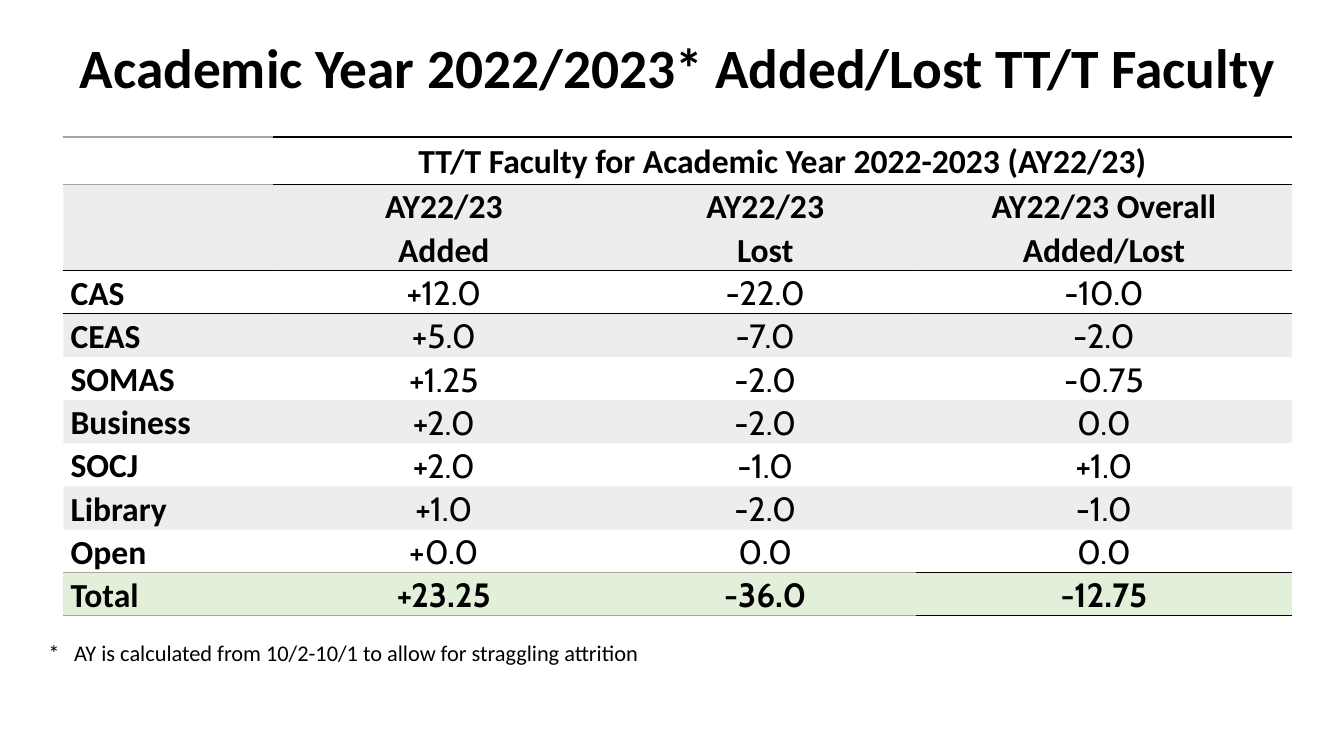
import pptx
import pptx.util
import pptx.dml.color
import pptx.enum.text
import pptx.oxml
import pptx.oxml.ns
import lxml.etree

Cm = pptx.util.Cm
Pt = pptx.util.Pt
Align = pptx.enum.text.PP_ALIGN
Anchor = pptx.enum.text.MSO_ANCHOR

title = "Academic Year 2022/2023* Added/Lost TT/T Faculty"
footnote = "*\tAY is calculated from 10/2-10/1 to allow for straggling attrition"
span_heading = "TT/T Faculty for Academic Year 2022-2023 (AY22/23)"
column_headings = ["", "AY22/23\nAdded", "AY22/23\nLost", "AY22/23 Overall\nAdded/Lost"]
units = [
    ("CAS", "+12.0", "-22.0", "-10.0"),
    ("CEAS", "+5.0", "-7.0", "-2.0"),
    ("SOMAS", "+1.25", "-2.0", "-0.75"),
    ("Business", "+2.0", "-2.0", "0.0"),
    ("SOCJ", "+2.0", "-1.0", "+1.0"),
    ("Library", "+1.0", "-2.0", "-1.0"),
    ("Open", "+0.0", "0.0", "0.0"),
]
total = ("Total", "+23.25", "-36.0", "-12.75")

theme = {
    "ink": "000000", "gray": "A5A5A5", "green": "E2F0D9", "band_alpha": 20000,
    "text": "Calibri", "figures": "Cabin",
    "title_size": 39.6, "table_size": 24, "footnote_size": 16, "rule": 1,
}
column_widths = [5.28, 8.61, 7.59, 9.48]
row_heights = [1.19, 1.63] + [0.89] * (len(units) + 1)


def write(paragraph, text, size, bold=False, font="text", align=Align.LEFT, spacing=None):
    paragraph.alignment = align
    if spacing:
        paragraph.line_spacing = spacing
    run = paragraph.add_run()
    run.text = text
    formats = {"size": Pt(theme[size]), "bold": bold, "name": theme[font]}
    for name, value in formats.items():
        setattr(run.font, name, value)
    run.font.color.rgb = pptx.dml.color.RGBColor.from_string(theme["ink"])


def add_text(slide, left, top, width, height, anchor):
    frame = slide.shapes.add_textbox(Cm(left), Cm(top), Cm(width), Cm(height)).text_frame
    frame.word_wrap = True
    frame.vertical_anchor = anchor
    return frame.paragraphs[0]


def paint(cell, color, alpha=None):
    cell.fill.solid()
    cell.fill.fore_color.rgb = pptx.dml.color.RGBColor.from_string(theme[color])
    if alpha:
        tint = cell._tc.tcPr.find(".//" + pptx.oxml.ns.qn("a:srgbClr"))
        lxml.etree.SubElement(tint, pptx.oxml.ns.qn("a:alpha")).set("val", str(alpha))


def rule(cell, edges):
    properties = cell._tc.get_or_add_tcPr()
    for position, (edge, color) in enumerate(edges.items()):
        line = pptx.oxml.parse_xml(
            f'<a:{edge} {pptx.oxml.ns.nsdecls("a")} w="{Pt(theme["rule"])}">'
            f'<a:solidFill><a:srgbClr val="{theme[color]}"/></a:solidFill></a:{edge}>')
        properties.insert(position, line)


def cell_edges(row, column):
    last_unit, total_row = len(units) + 1, len(units) + 2
    last_column = column == len(column_widths) - 1
    if row == 0:
        color = "ink" if column else "gray"
        return {"lnT": color, "lnB": color}
    if row == 1:
        return {"lnT": "ink", "lnB": "ink"} if column else {"lnB": "ink"}
    if row == 2:
        return {"lnT": "ink"} if last_column else {"lnT": "ink", "lnB": "ink"}
    if row == last_unit and last_column:
        return {"lnB": "ink"}
    if row == total_row:
        color = "ink" if last_column else "gray"
        return {"lnT": color, "lnB": color}
    return {}


def fill_cell(cell, row, column, text):
    total_row = len(row_heights) - 1
    if row == total_row:
        paint(cell, "green")
    elif row % 2:
        paint(cell, "gray", theme["band_alpha"])
    else:
        cell.fill.background()
    rule(cell, cell_edges(row, column))
    if not text:
        return
    margins = {"margin_left": Cm(0.18), "margin_right": Cm(0.18),
               "margin_top": 0, "margin_bottom": 0}
    for name, value in margins.items():
        setattr(cell, name, value)
    if row == 0:
        cell.vertical_anchor = Anchor.MIDDLE
    is_figure = row > 1 and column > 0
    for number, line in enumerate(text.split("\n")):
        frame = cell.text_frame
        paragraph = frame.add_paragraph() if number else frame.paragraphs[0]
        write(paragraph, line, "table_size", not is_figure or row == total_row,
              "figures" if is_figure else "text",
              Align.CENTER if column else Align.LEFT, 1.07)


def add_faculty_table(slide):
    rows = [("", span_heading, "", ""), column_headings, *units, total]
    faculty_frame = slide.shapes.add_table(
        len(rows), len(column_widths), Cm(1.6), Cm(3.45),
        Cm(sum(column_widths)), Cm(sum(row_heights)))
    faculty = faculty_frame.table
    faculty.first_row = faculty.horz_banding = False
    style = faculty._tbl.tblPr.find(pptx.oxml.ns.qn("a:tableStyleId"))
    style.text = "{2D5ABB26-0587-4C30-8999-92F81FD0307C}"
    for column, width in zip(faculty.columns, column_widths):
        column.width = Cm(width)
    for row, height in zip(faculty.rows, row_heights):
        row.height = Cm(height)
    faculty.cell(0, 1).merge(faculty.cell(0, 3))
    for row, texts in enumerate(rows):
        for column, text in enumerate(texts):
            fill_cell(faculty.cell(row, column), row, column, text)


def main():
    deck = pptx.Presentation()
    deck.slide_width, deck.slide_height = Cm(33.87), Cm(19.05)
    slide = deck.slides.add_slide(deck.slide_layouts[6])
    write(add_text(slide, 1.6, 0.97, 30.96, 1.6, Anchor.MIDDLE),
          title, "title_size", True, align=Align.CENTER, spacing=0.9)
    add_faculty_table(slide)
    note = add_text(slide, 0.97, 15.98, 18.49, 0.94, Anchor.TOP)
    write(note, footnote, "footnote_size")
    hanging = {"marL": Cm(0.65), "indent": -Cm(0.65)}
    for name, value in hanging.items():
        note._p.get_or_add_pPr().set(name, str(int(value)))
    deck.save("out.pptx")


if __name__ == "__main__":
    main()
